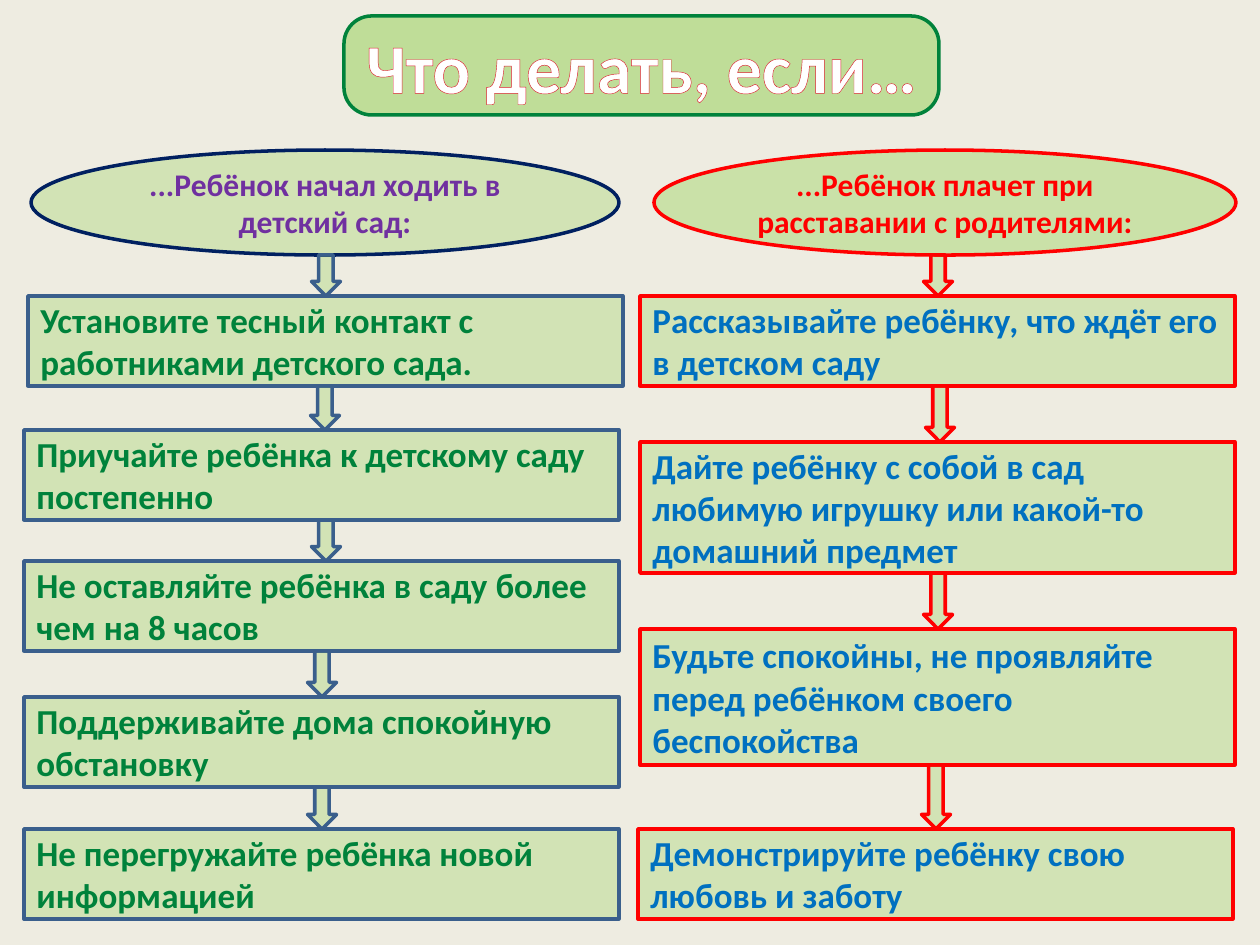
from lxml import etree
from pptx import Presentation
from pptx.dml.color import RGBColor
from pptx.enum.shapes import MSO_SHAPE
from pptx.enum.text import MSO_ANCHOR, PP_ALIGN
from pptx.oxml.ns import qn
from pptx.util import Emu, Pt

RECTANGLE = MSO_SHAPE.RECTANGLE
ROUNDED = MSO_SHAPE.ROUNDED_RECTANGLE
OVAL = MSO_SHAPE.OVAL
DOWN_ARROW = MSO_SHAPE.DOWN_ARROW
MIDDLE = MSO_ANCHOR.MIDDLE
LEFT = PP_ALIGN.LEFT
CENTER = PP_ALIGN.CENTER

EMU_PER_PX = 914400 / 126
COLORS = {
    "background": "EEECE1",
    "fill": "92D050",
    "green": "00823B",
    "navy": "002060",
    "steel": "3A5F8C",
    "purple": "7030A0",
    "red": "FF0000",
    "blue": "0070C0",
    "white": "FFFFFF",
    "outline": "DB1F2C",
}
ARROW_WIDTH = 29

STARTING = {
    "heading": "...Ребёнок начал ходить в детский сад:",
    "oval": (7, 0, 588, 105),
    "opacity": 30,
    "oval_line": "navy",
    "heading_color": "purple",
    "line": "steel",
    "text_color": "green",
    "steps": [
        (4, 146, 90, 302, "Установите тесный контакт с работниками детского сада."),
        (0, 280, 90, 301, "Приучайте ребёнка к детскому саду постепенно"),
        (0, 411, 90, 302, "Не оставляйте ребёнка в саду более чем на 8 часов"),
        (0, 547, 90, 298, "Поддерживайте дома спокойную обстановку"),
        (0, 679, 90, 298, "Не перегружайте ребёнка новой информацией"),
    ],
}
PARTING = {
    "heading": "...Ребёнок плачет при расставании с родителями:",
    "oval": (16, 0, 582, 105),
    "opacity": 39,
    "oval_line": "red",
    "heading_color": "red",
    "line": "red",
    "text_color": "blue",
    "steps": [
        (2, 146, 90, 300, "Рассказывайте ребёнку, что ждёт его в детском саду"),
        (2, 292, 131, 302, "Дайте ребёнку с собой в сад любимую игрушку или какой-то домашний предмет"),
        (2, 479, 136, 300, "Будьте спокойны, не проявляйте перед ребёнком своего беспокойства"),
        (0, 679, 90, 298, "Демонстрируйте ребёнку свою любовь и заботу"),
    ],
}


def px(value):
    return Emu(round(value * EMU_PER_PX))


def rgb(name):
    return RGBColor.from_string(COLORS[name])


def add_panel(slide, kind, box, line, opacity=30):
    shape = slide.shapes.add_shape(kind, *map(px, box))
    shape.shadow.inherit = False
    shape.fill.solid()
    shape.fill.fore_color.rgb = rgb("fill")
    color = shape._element.spPr.find(qn("a:solidFill"))[0]
    etree.SubElement(color, qn("a:alpha"), val=str(opacity * 1000))
    shape.line.color.rgb = rgb(line)
    shape.line.width = Pt(2)
    return shape


def write_text(shape, text, size, color, alignment):
    shape.text_frame.vertical_anchor = MIDDLE
    paragraph = shape.text_frame.paragraphs[0]
    paragraph.text = text
    paragraph.alignment = alignment
    font = paragraph.font
    font.name = "Calibri"
    font.size = Pt(size)
    font.bold = True
    font.color.rgb = rgb(color)
    return paragraph


def add_title(slide, box):
    shape = add_panel(slide, ROUNDED, box, "green", 50)
    shape.adjustments[0] = 0.28
    paragraph = write_text(shape, "Что делать, если…", 40, "white", CENTER)
    properties = paragraph.runs[0].font._element
    outline = etree.SubElement(properties, qn("a:ln"), w=str(Pt(0.75)))
    fill = etree.SubElement(outline, qn("a:solidFill"))
    etree.SubElement(fill, qn("a:srgbClr"), val=COLORS["outline"])


def add_column(slide, box, column):
    left, top, width = box
    oval_left, oval_top, oval_width, oval_height = column["oval"]
    oval_box = (left + oval_left, top + oval_top, oval_width, oval_height)
    oval = add_panel(slide, OVAL, oval_box, column["oval_line"], column["opacity"])
    write_text(oval, column["heading"], 18, column["heading_color"], CENTER)

    arrow_boxes = []
    previous_bottom = oval_top + oval_height
    for offset, step_top, height, arrow_center, text in column["steps"]:
        step_box = (left + offset, top + step_top, width, height)
        step = add_panel(slide, RECTANGLE, step_box, column["line"])
        write_text(step, text, 20, column["text_color"], LEFT)
        arrow_left = left + arrow_center - ARROW_WIDTH / 2
        arrow_height = step_top - previous_bottom
        arrow_boxes.append((arrow_left, top + previous_bottom, ARROW_WIDTH, arrow_height))
        previous_bottom = step_top + height

    for arrow_box in arrow_boxes:
        add_panel(slide, DOWN_ARROW, arrow_box, column["line"])


def main():
    presentation = Presentation()
    presentation.slide_width = px(1260)
    presentation.slide_height = px(945)
    slide = presentation.slides.add_slide(presentation.slide_layouts[6])
    slide.background.fill.solid()
    slide.background.fill.fore_color.rgb = rgb("background")
    add_title(slide, (344, 16, 595, 99))
    add_column(slide, (24, 150, 595), STARTING)
    add_column(slide, (638, 150, 595), PARTING)
    presentation.save("out.pptx")


if __name__ == "__main__":
    main()
